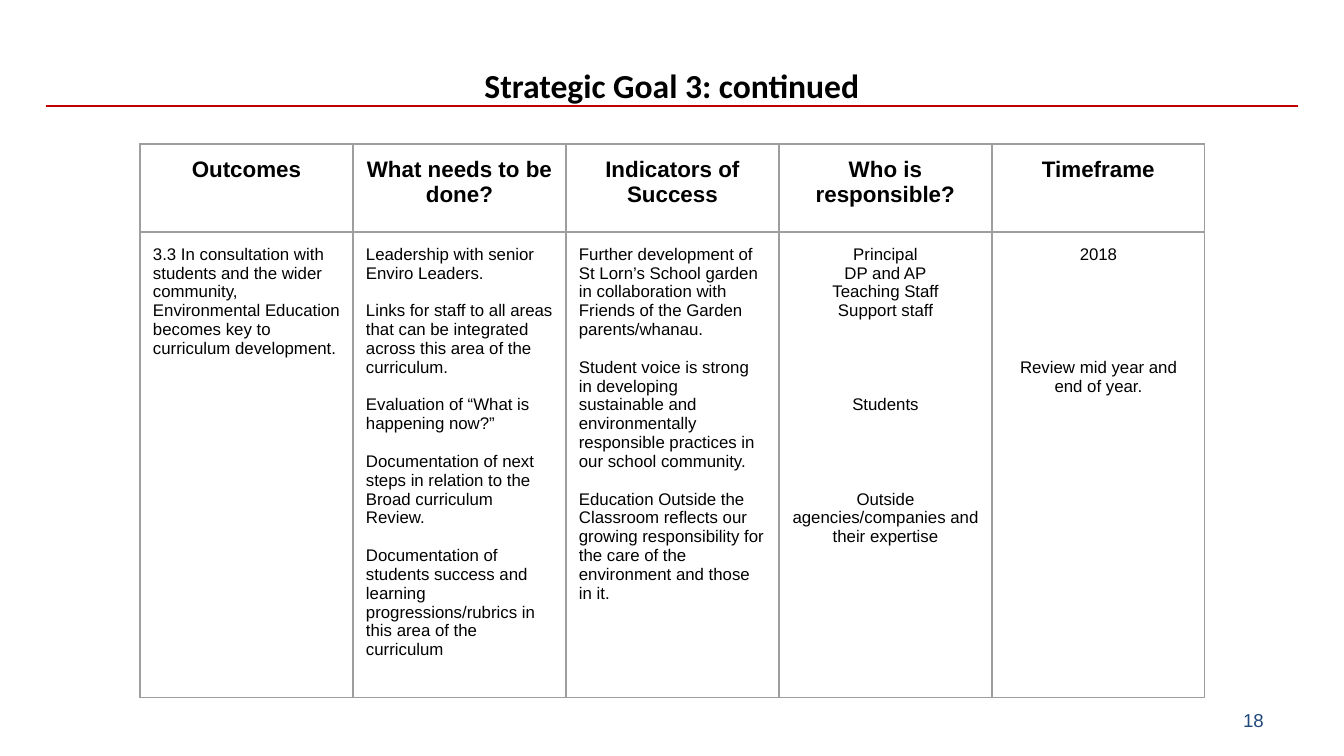
from lxml import etree
from pptx import Presentation, util as u
from pptx.dml.color import RGBColor
from pptx.enum import shapes, text
from pptx.oxml import parse_xml
from pptx.oxml.ns import nsdecls, qn

BLACK = RGBColor(0x00, 0x00, 0x00)
RED = RGBColor(0xC0, 0x00, 0x00)
BLUE = RGBColor(0x1F, 0x49, 0x7D)
GREY = RGBColor(0x9E, 0x9E, 0x9E)
LEFT, MID, RIGHT = text.PP_ALIGN.LEFT, text.PP_ALIGN.CENTER, text.PP_ALIGN.RIGHT
LINE = 10.1


def px(n):
    return u.Emu(round(n * 914400 / 134.4))


def write(frame, lines, size=9, font="Arial", color=BLACK, bold=False, align=LEFT):
    frame.word_wrap = True
    for i, (words, gap) in enumerate(lines):
        para = frame.paragraphs[0] if i == 0 else frame.add_paragraph()
        para.alignment = align
        para.space_before = u.Pt(gap * LINE)
        run = para.add_run()
        run.text = words
        run.font.size = u.Pt(size)
        run.font.name = font
        run.font.bold = bold
        run.font.color.rgb = color


deck = Presentation()
deck.slide_width, deck.slide_height = px(1344), px(756)
slide = deck.slides.add_slide(deck.slide_layouts[6])

rule = slide.shapes.add_connector(shapes.MSO_CONNECTOR.STRAIGHT, px(46), px(106), px(1298), px(106))
rule.line.color.rgb = RED
rule.line.width = u.Pt(0.75)
etree.SubElement(rule._element.spPr, qn("a:effectLst"))

title = slide.shapes.add_textbox(px(46), px(52), px(1252), px(152)).text_frame
title.margin_top = title.margin_bottom = px(13)
write(title, [("Strategic Goal 3: continued", 0)], size=18, font="Calibri", bold=True, align=MID)

heads = ["Outcomes", "What needs to be done?", "Indicators of Success", "Who is responsible?", "Timeframe"]
plan = [
    [("3.3 In consultation with students and the wider community, Environmental Education "
      "becomes key to curriculum development.", 0)],
    [("Leadership with senior Enviro Leaders.", 0),
     ("Links for staff to all areas that can be integrated across this area of the curriculum.", 1),
     ("Evaluation of “What is happening now?”", 1),
     ("Documentation of next steps in relation to the Broad curriculum Review.", 1),
     ("Documentation of students success and learning progressions/rubrics in this area of the curriculum", 1)],
    [("Further development of St Lorn’s School garden in collaboration with Friends of the Garden "
      "parents/whanau.", 0),
     ("Student voice is strong in developing sustainable and environmentally responsible practices "
      "in our school community.", 1),
     ("Education Outside the Classroom reflects our growing responsibility for the care of the "
      "environment and those in it.", 1)],
    [("Principal", 0), ("DP and AP", 0), ("Teaching Staff", 0), ("Support staff", 0), ("Students", 4),
     ("Outside agencies/companies and their expertise", 4)],
    [("2018", 0), ("Review mid year and end of year.", 5)],
]

grid = slide.shapes.add_table(2, 5, px(140), px(144), px(1065), px(529)).table
grid.first_row = grid.horz_banding = False
grid.rows[0].height, grid.rows[1].height = px(88), px(441)
for col, (head, body) in enumerate(zip(heads, plan)):
    grid.columns[col].width = px(213)
    write(grid.cell(0, col).text_frame, [(head, 0)], size=12, bold=True, align=MID)
    write(grid.cell(1, col).text_frame, body, align=LEFT if col < 3 else MID)

for cell in grid.iter_cells():
    cell.margin_left = cell.margin_right = cell.margin_top = cell.margin_bottom = px(13)
    cell.vertical_anchor = text.MSO_ANCHOR.TOP
    cell.fill.background()
    for i, side in enumerate(("lnL", "lnR", "lnT", "lnB")):
        edge = parse_xml(
            f'<a:{side} {nsdecls("a")} w="{u.Pt(0.75)}"><a:solidFill>'
            f'<a:srgbClr val="{GREY}"/></a:solidFill></a:{side}>')
        cell._tc.get_or_add_tcPr().insert(i, edge)

page = slide.shapes.add_textbox(px(964), px(700), px(313), px(41)).text_frame
page.vertical_anchor = text.MSO_ANCHOR.MIDDLE
write(page, [("18", 0)], size=10, color=BLUE, align=RIGHT)

deck.save("out.pptx")
